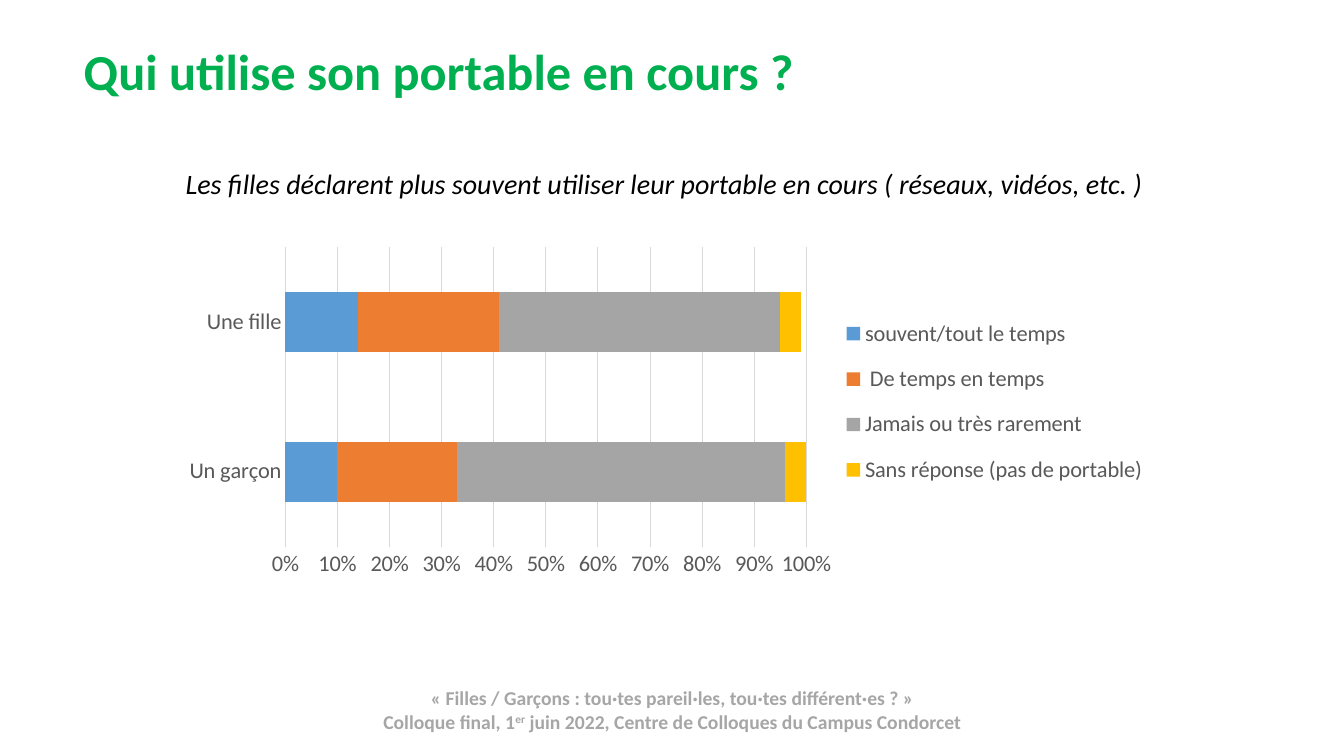
"""Build the slide on phone use in class, with its title, claim, stacked bars and footer."""
import dataclasses
import typing

import lxml.etree
import pptx
import pptx.chart.data
import pptx.dml.color
import pptx.enum.chart
import pptx.enum.text
import pptx.oxml.ns
import pptx.util

WIDE = pptx.util.Inches(13.33)
HIGH = pptx.util.Inches(7.5)
ALIGN = pptx.enum.text.PP_ALIGN
TICK = pptx.enum.chart.XL_TICK_MARK


@dataclasses.dataclass(frozen=True)
class Theme:
    face: str = "Calibri"
    green: str = "00B050"
    black: str = "000000"
    pale: str = "A6A6A6"
    label: str = "595959"
    grid: str = "D9D9D9"
    title: int = 36
    claim: int = 20
    chart: int = 16
    foot: int = 14


@dataclasses.dataclass(frozen=True)
class Spot:
    left: float
    top: float
    width: float
    height: float

    def place(self) -> dict[str, int]:
        return {
            "left": round(WIDE * self.left / 100),
            "top": round(HIGH * self.top / 100),
            "width": round(WIDE * self.width / 100),
            "height": round(HIGH * self.height / 100),
        }


@dataclasses.dataclass(frozen=True)
class Block:
    spot: Spot
    lines: tuple[tuple[str, ...], ...]
    size: int
    color: str
    align: typing.Any
    style: dict[str, bool]


@dataclasses.dataclass(frozen=True)
class Answer:
    name: str
    color: str
    shares: tuple[float, float]


THEME = Theme()
TITLE = Block(Spot(5.48, 5.2, 86.27, 9.2), (("Qui utilise son portable en cours ?",),),
              THEME.title, THEME.green, ALIGN.LEFT, {"bold": True})
CLAIM = Block(
    Spot(13.07, 21.33, 80.12, 5.87),
    (("Les filles déclarent plus souvent utiliser leur portable en cours ( réseaux, vidéos, etc. )",),),
    THEME.claim, THEME.black, ALIGN.LEFT, {"italic": True})
FOOT = Block(
    Spot(6.9, 90.13, 86.27, 7.6),
    (("« Filles / Garçons : tou·tes pareil·les, tou·tes différent·es ? »",),
     ("Colloque final, 1", "er", " juin 2022, Centre de Colloques du Campus Condorcet")),
    THEME.foot, THEME.pale, ALIGN.CENTER, {"bold": True})
CHART = Spot(12.6, 31.73, 74.42, 45.6)
PLOT = Spot(11.6, 2, 52.1, 87)
KEY = Spot(66.5, 18, 32, 58)
PUPILS = ("Un garçon", "Une fille")
ANSWERS = (
    Answer("souvent/tout le temps", "5B9BD5", (0.1, 0.14)),
    Answer(" De temps en temps", "ED7D31", (0.23, 0.27)),
    Answer("Jamais ou très rarement", "A5A5A5", (0.63, 0.54)),
    Answer("Sans réponse (pas de portable)", "FFC000", (0.04, 0.04)),
)


def apply(target: typing.Any, values: dict[str, typing.Any]) -> None:
    for name, value in values.items():
        setattr(target, name, value)


def paint(target: typing.Any, color: str) -> None:
    target.rgb = pptx.dml.color.RGBColor.from_string(color)


def dress(font: typing.Any, size: int, color: str, style: dict[str, bool]) -> None:
    apply(font, {"name": THEME.face, "size": pptx.util.Pt(size), **style})
    paint(font.color, color)


def rule(line: typing.Any) -> None:
    line.width = pptx.util.Pt(0.75)
    paint(line.color, THEME.grid)


def write(shape: typing.Any, block: Block) -> None:
    apply(shape, block.spot.place())
    frame = shape.text_frame
    frame.word_wrap = True
    for index, parts in enumerate(block.lines):
        para = frame.add_paragraph() if index else frame.paragraphs[0]
        para.alignment = block.align
        for part in parts:
            run = para.add_run()
            run.text = part
            dress(run.font, block.size, block.color, block.style)
            if part == "er":
                run._r.get_or_add_rPr().set("baseline", "30000")


def layout(parent: typing.Any, index: int, spot: Spot, inner: bool) -> None:
    tag = pptx.oxml.ns.qn
    for old in parent.findall(tag("c:layout")):
        parent.remove(old)
    outer = lxml.etree.Element(tag("c:layout"))
    manual = lxml.etree.SubElement(outer, tag("c:manualLayout"))
    items = {"layoutTarget": "inner"} if inner else {}
    items |= {"xMode": "edge", "yMode": "edge"}
    shares = (spot.left, spot.top, spot.width, spot.height)
    items |= {name: f"{share / 100:.3f}" for name, share in zip("xywh", shares)}
    for name, value in items.items():
        lxml.etree.SubElement(manual, tag(f"c:{name}")).set("val", value)
    parent.insert(index, outer)


def draw(slide: typing.Any) -> None:
    data = pptx.chart.data.CategoryChartData(number_format="0%")
    data.categories = PUPILS
    for answer in ANSWERS:
        data.add_series(answer.name, answer.shares)
    place = CHART.place()
    chart = slide.shapes.add_chart(
        pptx.enum.chart.XL_CHART_TYPE.BAR_STACKED,
        place["left"], place["top"], place["width"], place["height"], data).chart
    apply(chart, {"has_title": False, "has_legend": True})
    dress(chart.font, THEME.chart, THEME.black, {})
    plot = chart.plots[0]
    apply(plot, {"gap_width": 150, "overlap": 100, "vary_by_categories": False})
    for series, answer in zip(plot.series, ANSWERS):
        series.format.fill.solid()
        paint(series.format.fill.fore_color, answer.color)
    names, values = chart.category_axis, chart.value_axis
    for axis in (names, values):
        apply(axis, {"major_tick_mark": TICK.NONE, "minor_tick_mark": TICK.NONE})
        dress(axis.tick_labels.font, THEME.chart, THEME.label, {})
    rule(names.format.line)
    apply(values, {"minimum_scale": 0, "maximum_scale": 1, "major_unit": 0.1,
                   "has_major_gridlines": True})
    apply(values.tick_labels, {"number_format": "0%", "number_format_is_linked": False})
    values.format.line.fill.background()
    rule(values.major_gridlines.format.line)
    key = chart.legend
    apply(key, {"position": pptx.enum.chart.XL_LEGEND_POSITION.RIGHT,
                "include_in_layout": False})
    dress(key.font, THEME.chart, THEME.label, {})
    layout(chart._chartSpace.chart.plotArea, 0, PLOT, True)
    layout(key._element, 1, KEY, False)


def main() -> None:
    deck = pptx.Presentation()
    apply(deck, {"slide_width": WIDE, "slide_height": HIGH})
    slide = deck.slides.add_slide(deck.slide_layouts[5])
    title = slide.shapes.title
    write(title, TITLE)
    title.text_frame.vertical_anchor = pptx.enum.text.MSO_ANCHOR.MIDDLE
    title.text_frame.paragraphs[0].line_spacing = 0.9
    draw(slide)
    for block in (CLAIM, FOOT):
        write(slide.shapes.add_textbox(0, 0, 0, 0), block)
    deck.save("out.pptx")


if __name__ == "__main__":
    main()
